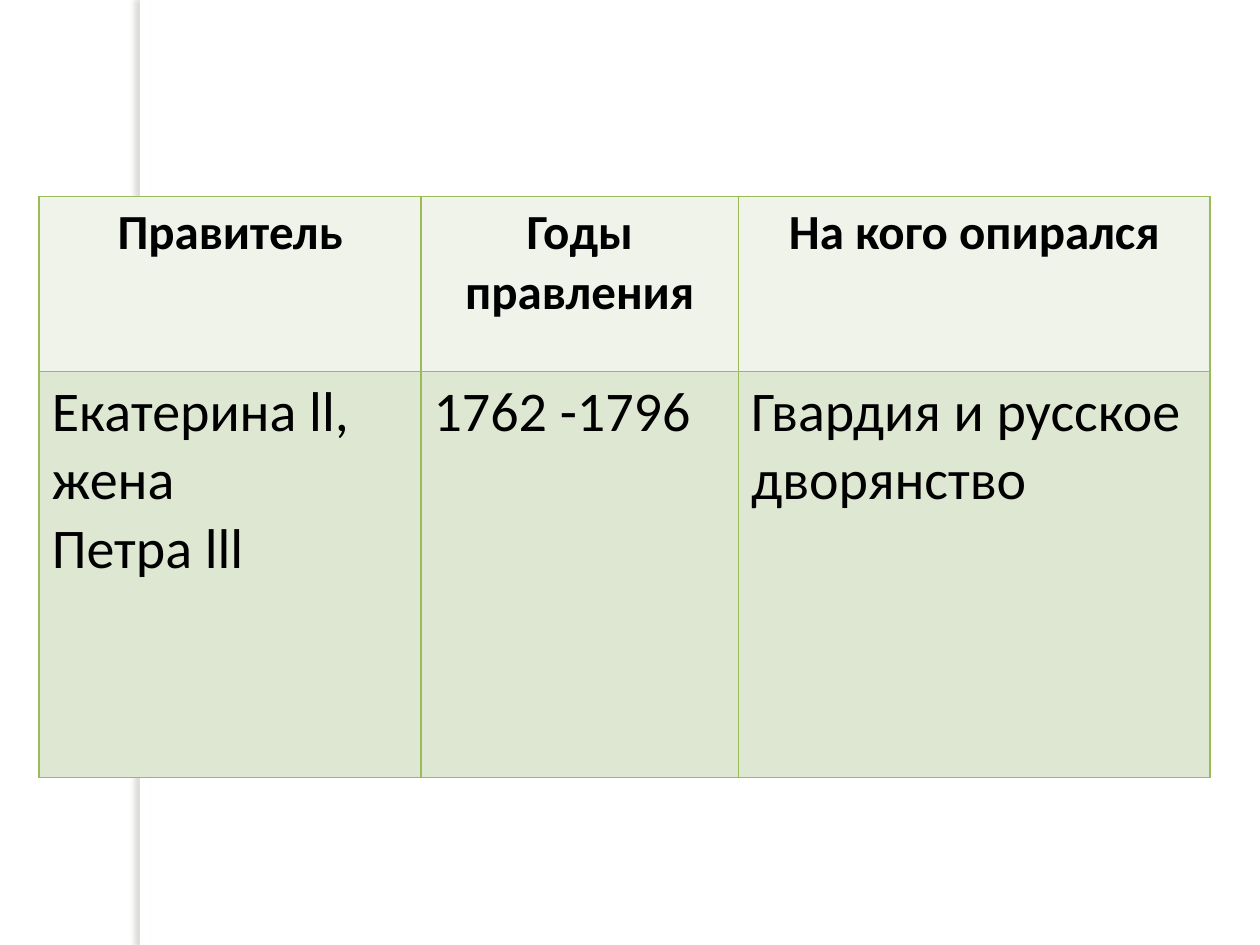
from lxml.etree import SubElement as Sub
from pptx import Presentation
from pptx.dml.color import RGBColor as RGB
from pptx.enum.shapes import MSO_SHAPE as Shape
from pptx.enum.text import PP_ALIGN as Align
from pptx.oxml import parse_xml
from pptx.oxml.ns import nsdecls, qn
from pptx.util import Pt

WHITE = RGB(0xFF, 0xFF, 0xFF)
BLACK = RGB(0, 0, 0)
GREEN = RGB(0x9B, 0xBB, 0x59)
PALE = RGB(0xEF, 0xF3, 0xEA)
MINT = RGB(0xDE, 0xE7, 0xD1)
SHADE = RGB(0x73, 0x6F, 0x63)

FONT = "Calibri"
COLS = [218.2, 181.4, 269.6]
ROWS = [100, 232]
TEXT = [
    ["Правитель", "Годы\nправления", "На кого опирался"],
    ["Екатерина ll, жена\nПетра lll", "1762 -1796", "Гвардия и русское дворянство"],
]


def add_strip(slide, left, top, width, height):
    strip = slide.shapes.add_shape(
        Shape.RECTANGLE, Pt(left), Pt(top), Pt(width), Pt(height))
    strip.fill.solid()
    strip.fill.fore_color.rgb = WHITE
    strip.line.fill.background()
    strip.shadow.inherit = False
    glow = strip._element.spPr.find(qn("a:effectLst"))
    outer = Sub(glow, qn("a:outerShdw"), blurRad=str(Pt(3)), dist=str(Pt(3)),
                dir="10800000", algn="tl", rotWithShape="0")
    tint = Sub(outer, qn("a:srgbClr"), val=str(SHADE))
    Sub(tint, qn("a:alpha"), val="25000")


def set_edges(cell):
    props = cell._tc.get_or_add_tcPr()
    for spot, side in enumerate("LRTB"):
        props.insert(spot, parse_xml(
            f'<a:ln{side} {nsdecls("a")} w="{Pt(1)}"><a:solidFill>'
            f'<a:srgbClr val="{GREEN}"/></a:solidFill></a:ln{side}>'))


def fill_cell(cell, text, head):
    cell.fill.solid()
    cell.fill.fore_color.rgb = PALE if head else MINT
    set_edges(cell)
    cell.text_frame.text = text
    for para in cell.text_frame.paragraphs:
        para.alignment = Align.CENTER if head else Align.LEFT
        for run in para.runs:
            font = run.font
            font.name = FONT
            font.size = Pt(28 if head else 32)
            font.bold = head
            font.color.rgb = BLACK


def add_rulers(slide, left, top):
    table = slide.shapes.add_table(
        len(ROWS), len(COLS), Pt(left), Pt(top), Pt(sum(COLS)), Pt(sum(ROWS))).table
    for col, width in zip(table.columns, COLS):
        col.width = Pt(width)
    for row, height, line in zip(table.rows, ROWS, TEXT):
        row.height = Pt(height)
        for cell, text in zip(row.cells, line):
            fill_cell(cell, text, line is TEXT[0])


def main():
    deck = Presentation()
    deck.slide_width, deck.slide_height = Pt(720), Pt(540)
    slide = deck.slides.add_slide(deck.slide_layouts[6])
    add_strip(slide, 80, 0, 5.8, 540)
    add_rulers(slide, 22.4, 112.4)
    deck.save("out.pptx")


if __name__ == "__main__":
    main()
